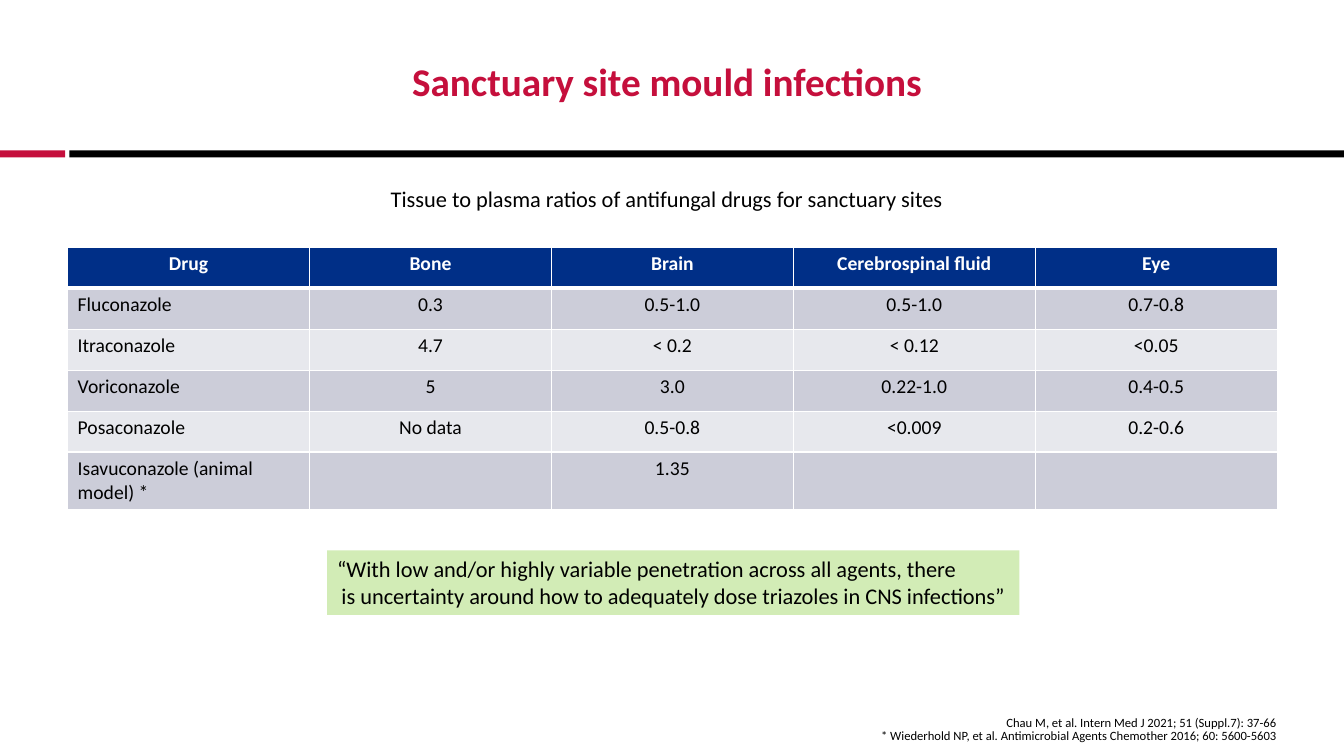
"""Build the slide on tissue to plasma ratios of antifungal drugs."""
from dataclasses import dataclass

import pptx
import pptx.dml.color
import pptx.enum.shapes
import pptx.enum.text
import pptx.oxml
import pptx.oxml.ns
import pptx.util

Pt = pptx.util.Pt
ALIGN = pptx.enum.text.PP_ALIGN
ANCHOR = pptx.enum.text.MSO_ANCHOR

TITLE = "Sanctuary site mould infections "
SUBTITLE = "Tissue to plasma ratios of antifungal drugs for sanctuary sites"
ROWS = [
    ("Drug", "Bone", "Brain", "Cerebrospinal fluid", "Eye"),
    ("Fluconazole", "0.3", "0.5-1.0", "0.5-1.0", "0.7-0.8"),
    ("Itraconazole", "4.7", "< 0.2", "< 0.12", "<0.05"),
    ("Voriconazole", "5", "3.0", "0.22-1.0", "0.4-0.5"),
    ("Posaconazole", "No data", "0.5-0.8", "<0.009", "0.2-0.6"),
    ("Isavuconazole (animal model) *", "", "1.35", "", ""),
]
QUOTE = [
    "“With low and/or highly variable penetration across all agents, there",
    "is uncertainty around how to adequately dose triazoles in CNS infections”",
]
REFERENCES = [
    "Chau M, et al. Intern Med J 2021; 51 (Suppl.7): 37-66",
    "* Wiederhold NP, et al. Antimicrobial Agents Chemother 2016; 60: 5600-5603",
]


@dataclass(frozen=True)
class Theme:
    """Colours, font and type sizes of the slide."""
    font: str = "Calibri"
    red: str = "C50F3C"
    black: str = "000000"
    white: str = "FFFFFF"
    navy: str = "002F87"
    bands: tuple = ("E7E8ED", "CCCDD9")
    green: str = "D2ECB6"
    title: float = 28
    text: float = 16
    cell: float = 14
    reference: float = 9


THEME = Theme()
SLIDE_WIDTH, SLIDE_HEIGHT = 960, 540
MARGIN, TABLE_TOP, TABLE_WIDTH = 48.3, 176.5, 864
ROW_HEIGHT, LAST_ROW_HEIGHT = 29.3, 41.4
BAR_TOP, BAR_HEIGHT, RED_WIDTH, BLACK_LEFT = 107.4, 5, 46.6, 49.5


def colour(code):
    """Return the colour for a hexadecimal code."""
    return pptx.dml.color.RGBColor.from_string(code)


def place(shape, left, top, width, height):
    """Move and size a shape in points."""
    shape.left, shape.top = Pt(left), Pt(top)
    shape.width, shape.height = Pt(width), Pt(height)


def write(frame, lines, size, ink=THEME.black, bold=False, aligns=(ALIGN.LEFT,),
          spacing=None):
    """Write lines into a text frame, repeating the last alignment as needed."""
    for index, line in enumerate(lines):
        paragraph = frame.paragraphs[0] if index == 0 else frame.add_paragraph()
        paragraph.alignment = aligns[min(index, len(aligns) - 1)]
        paragraph.space_before = Pt(0)
        if spacing:
            paragraph.line_spacing = spacing
        run = paragraph.add_run()
        run.text = line
        run.font.name, run.font.size, run.font.bold = THEME.font, Pt(size), bold
        run.font.color.rgb = colour(ink)


def add_block(slide, left, top, width, height, fill):
    """Add a plain filled rectangle."""
    block = slide.shapes.add_shape(pptx.enum.shapes.MSO_SHAPE.RECTANGLE,
                                   Pt(left), Pt(top), Pt(width), Pt(height))
    block.shadow.inherit = False
    block.fill.solid()
    block.fill.fore_color.rgb = colour(fill)
    block.line.fill.background()
    return block


def set_borders(cell, **widths):
    """Draw white cell borders with the given widths in points."""
    properties = cell._tc.get_or_add_tcPr()
    for side, width in widths.items():
        properties.append(pptx.oxml.parse_xml(
            f'<a:ln{side} {pptx.oxml.ns.nsdecls("a")} w="{Pt(width)}"><a:solidFill>'
            f'<a:srgbClr val="{THEME.white}"/></a:solidFill></a:ln{side}>'))


def add_ratio_table(slide):
    """Add the table of drugs by sanctuary site."""
    heights = [ROW_HEIGHT] * (len(ROWS) - 1) + [LAST_ROW_HEIGHT]
    table = slide.shapes.add_table(len(ROWS), len(ROWS[0]), Pt(MARGIN), Pt(TABLE_TOP),
                                   Pt(TABLE_WIDTH), Pt(sum(heights))).table
    for column in table.columns:
        column.width = Pt(TABLE_WIDTH / len(ROWS[0]))
    for row_index, values in enumerate(ROWS):
        header = row_index == 0
        table.rows[row_index].height = Pt(heights[row_index])
        for column_index, value in enumerate(values):
            cell = table.cell(row_index, column_index)
            set_borders(cell, L=1, R=1, T=3 if row_index == 1 else 1, B=3 if header else 1)
            cell.fill.solid()
            cell.fill.fore_color.rgb = colour(THEME.navy if header else THEME.bands[row_index % 2])
            if value:
                left = column_index == 0 and not header
                write(cell.text_frame, [value], THEME.cell, bold=header,
                      ink=THEME.white if header else THEME.black,
                      aligns=(ALIGN.LEFT if left else ALIGN.CENTER,))


def add_references(body):
    """Set the references in the body placeholder, without bullets."""
    place(body, 496.1, 519.1, 415.5, 11.5)
    frame = body.text_frame
    frame.auto_size = pptx.enum.text.MSO_AUTO_SIZE.NONE
    frame.vertical_anchor = ANCHOR.BOTTOM
    frame.margin_left = frame.margin_right = frame.margin_top = frame.margin_bottom = 0
    write(frame, REFERENCES, THEME.reference, aligns=(ALIGN.RIGHT,), spacing=0.85)
    for paragraph in frame.paragraphs:
        properties = paragraph._p.get_or_add_pPr()
        properties.set("marL", "0")
        properties.set("indent", "0")
        properties.append(pptx.oxml.parse_xml(f'<a:buNone {pptx.oxml.ns.nsdecls("a")}/>'))


def main():
    """Build and save the presentation."""
    presentation = pptx.Presentation()
    presentation.slide_width, presentation.slide_height = Pt(SLIDE_WIDTH), Pt(SLIDE_HEIGHT)
    slide = presentation.slides.add_slide(presentation.slide_layouts[1])

    add_block(slide, BLACK_LEFT, BAR_TOP, SLIDE_WIDTH - BLACK_LEFT, BAR_HEIGHT, THEME.black)
    add_block(slide, 0, BAR_TOP, RED_WIDTH, BAR_HEIGHT, THEME.red)

    title = slide.shapes.title
    place(title, MARGIN, 15.4, 862.5, 84.2)
    title.text_frame.vertical_anchor = ANCHOR.MIDDLE
    write(title.text_frame, [TITLE], THEME.title, ink=THEME.red, bold=True,
          aligns=(ALIGN.CENTER,))

    add_ratio_table(slide)
    add_references(slide.placeholders[1])

    subtitle = slide.shapes.add_textbox(Pt(272), Pt(129), Pt(413.5), Pt(26.7))
    subtitle.text_frame.word_wrap = True
    write(subtitle.text_frame, [SUBTITLE], THEME.text)

    quote = add_block(slide, 233.7, 393.2, 494.6, 46, THEME.green)
    quote.text_frame.word_wrap = True
    quote.text_frame.vertical_anchor = ANCHOR.TOP
    write(quote.text_frame, QUOTE, THEME.text, aligns=(ALIGN.LEFT, ALIGN.CENTER))

    presentation.save("out.pptx")


if __name__ == "__main__":
    main()
